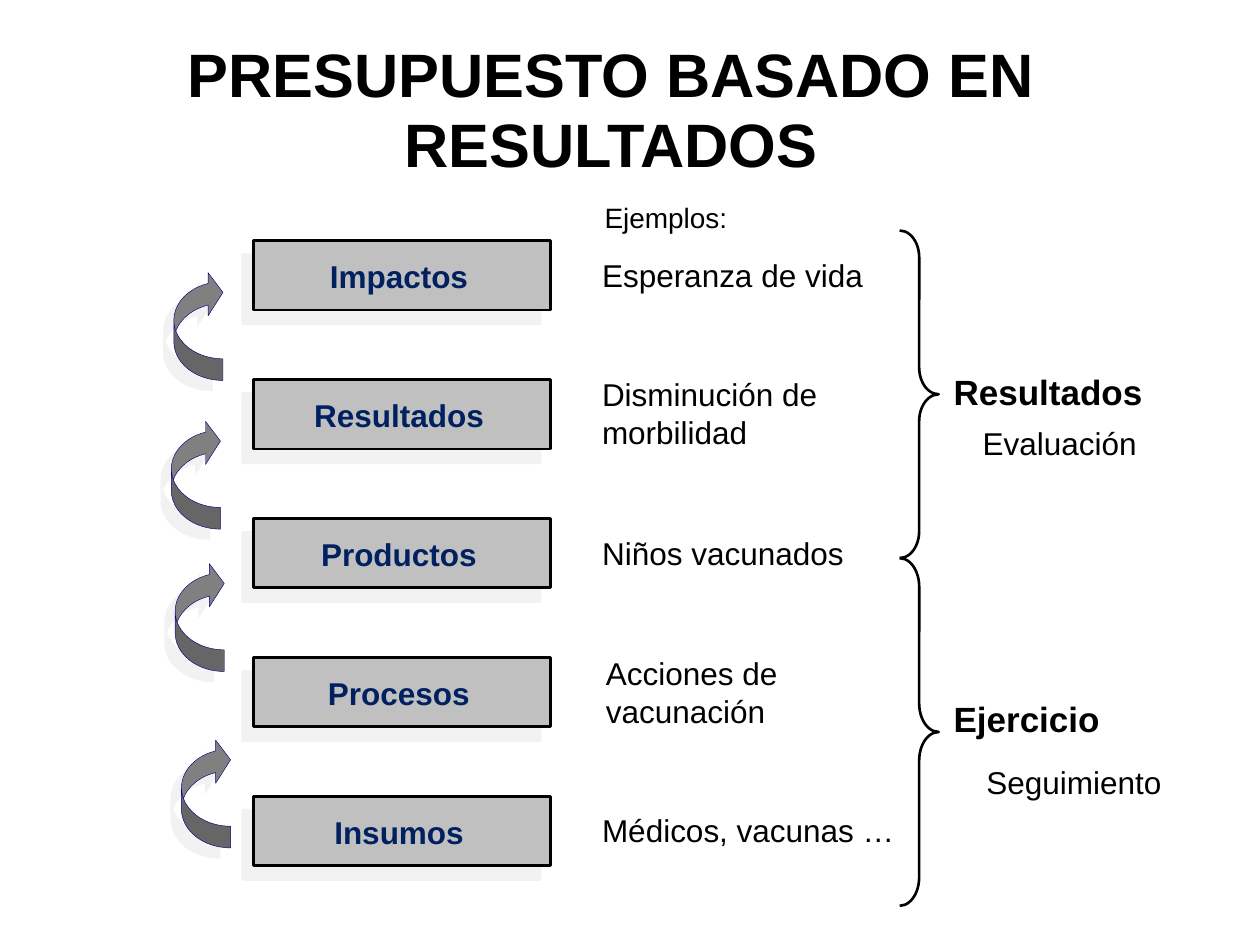
import pptx
import pptx.dml.color
import pptx.enum.shapes
import pptx.enum.text
import pptx.oxml
import pptx.oxml.ns
import pptx.util

Inches = pptx.util.Inches
Pt = pptx.util.Pt
SHAPE = pptx.enum.shapes.MSO_SHAPE

COLORS = {
    "text": "000000",
    "label": "002060",
    "bar": "C0C0C0",
    "arrow": "808080",
    "arrow_line": "000080",
    "shadow": "E7E6E6",
}
FONT = "Arial"
ROW_PITCH = 1.1025

# Level, width of its label
LEVELS = [
    ("Impactos", 1.3),
    ("Resultados", 1.55),
    ("Productos", 1.44),
    ("Procesos", 1.33),
    ("Insumos", 1.23),
]
# Example, left, top, width, height, wraps
EXAMPLES = [
    ("Esperanza de vida", 4.68, 1.98, 2.27, 0.4, False),
    ("Disminución de morbilidad", 4.68, 2.93, 2.03, 0.7, True),
    ("Niños vacunados", 4.68, 4.19, 2.12, 0.4, False),
    ("Acciones de vacunación", 4.71, 5.14, 1.95, 0.7, True),
    ("Médicos, vacunas …", 4.68, 6.39, 2.52, 0.4, False),
]
ARROWS = [(1.38, 2.15), (1.36, 3.33), (1.39, 4.46), (1.44, 5.86)]


def rgb(name):
    return pptx.dml.color.RGBColor.from_string(COLORS[name])


def add_text(slide, text, left, top, width, height, size=18, bold=False,
             color="text", wrap=False):
    box = slide.shapes.add_textbox(Inches(left), Inches(top),
                                   Inches(width), Inches(height))
    frame = box.text_frame
    frame.word_wrap = wrap
    frame.auto_size = pptx.enum.text.MSO_AUTO_SIZE.SHAPE_TO_FIT_TEXT
    frame.text = text
    paragraph = frame.paragraphs[0]
    font = paragraph.runs[0].font
    font.name = FONT
    font.size = Pt(size)
    font.bold = bold
    font.color.rgb = rgb(color)
    return paragraph


def add_outline(slide, kind, left, top, width, height, line, weight, fill=None):
    shape = slide.shapes.add_shape(kind, Inches(left), Inches(top),
                                   Inches(width), Inches(height))
    shape.shadow.inherit = False
    if fill:
        shape.fill.solid()
        shape.fill.fore_color.rgb = rgb(fill)
    else:
        shape.fill.background()
    shape.line.color.rgb = rgb(line)
    shape.line.width = Pt(weight)
    return shape


def cast_shadow(shape, distance, angle):
    effects = shape.fill._xPr.find(pptx.oxml.ns.qn("a:effectLst"))
    effects.append(pptx.oxml.parse_xml(
        f'<a:outerShdw {pptx.oxml.ns.nsdecls("a")} blurRad="0" '
        f'dist="{Pt(distance)}" dir="{angle * 60000}" algn="ctr" rotWithShape="0">'
        f'<a:srgbClr val="{COLORS["shadow"]}"><a:alpha val="50000"/></a:srgbClr>'
        '</a:outerShdw>'))


def add_title(slide, left, top, width, height):
    title = add_text(slide, "PRESUPUESTO BASADO EN RESULTADOS", left, top,
                     width, height, size=35, bold=True, wrap=True)
    title.alignment = pptx.enum.text.PP_ALIGN.CENTER
    title.line_spacing = 0.95


def add_levels(slide, left, top, width, height):
    label_center = left + width / 2 - 0.02
    for row, (level, label_width) in enumerate(LEVELS):
        bar_top = top + row * ROW_PITCH
        bar = add_outline(slide, SHAPE.RECTANGLE, left, bar_top, width, height,
                          "text", 1.5, "bar")
        cast_shadow(bar, 10, 127)
        add_text(slide, level, label_center - label_width / 2, bar_top + 0.08,
                 label_width, 0.4, bold=True, color="label")


def add_rising_arrow(slide, left, top, width, height):
    arrow = add_outline(slide, SHAPE.CURVED_LEFT_ARROW, left, top, width, height,
                        "arrow_line", 0.25, "arrow")
    for index, value in enumerate((0.44, 0.879, 0.304)):
        arrow.adjustments[index] = value
    # Turn the arrow so that it climbs to the level above
    xfrm = arrow.fill._xPr.find(pptx.oxml.ns.qn("a:xfrm"))
    xfrm.set("flipH", "1")
    xfrm.set("flipV", "1")
    cast_shadow(arrow, 8.5, 135)


def add_examples(slide, left, top):
    add_text(slide, "Ejemplos:", left, top, 1.18, 0.37, size=16)
    for text, *box, wrap in EXAMPLES:
        add_text(slide, text, *box, wrap=wrap)


def add_stage(slide, left, top, width, height, curl, heading, detail):
    brace = add_outline(slide, SHAPE.RIGHT_BRACE, left, top, width, height,
                        "text", 1.5)
    brace.adjustments[0] = curl
    brace.adjustments[1] = 0.5
    add_text(slide, *heading, size=20, bold=True)
    add_text(slide, *detail)


def main():
    deck = pptx.Presentation()
    deck.slide_width = Inches(10)
    deck.slide_height = Inches(7.5)
    slide = deck.slides.add_slide(deck.slide_layouts[6])

    add_title(slide, 0.57, 0.28, 8.56, 1.15)
    add_levels(slide, 2.01, 1.91, 2.36, 0.55)
    for left, top in ARROWS:
        add_rising_arrow(slide, left, top, 0.39, 0.87)
    add_examples(slide, 4.7, 1.54)

    # Stages that the braces group
    add_stage(slide, 7.14, 1.83, 0.31, 2.6, 0.689,
              ("Resultados", 7.47, 2.89, 1.7, 0.43),
              ("Evaluación", 7.7, 3.32, 1.42, 0.4))
    add_stage(slide, 7.14, 4.43, 0.31, 2.76, 0.731,
              ("Ejercicio", 7.47, 5.49, 1.36, 0.43),
              ("Seguimiento", 7.73, 6.01, 1.59, 0.4))

    deck.save("out.pptx")


if __name__ == "__main__":
    main()
